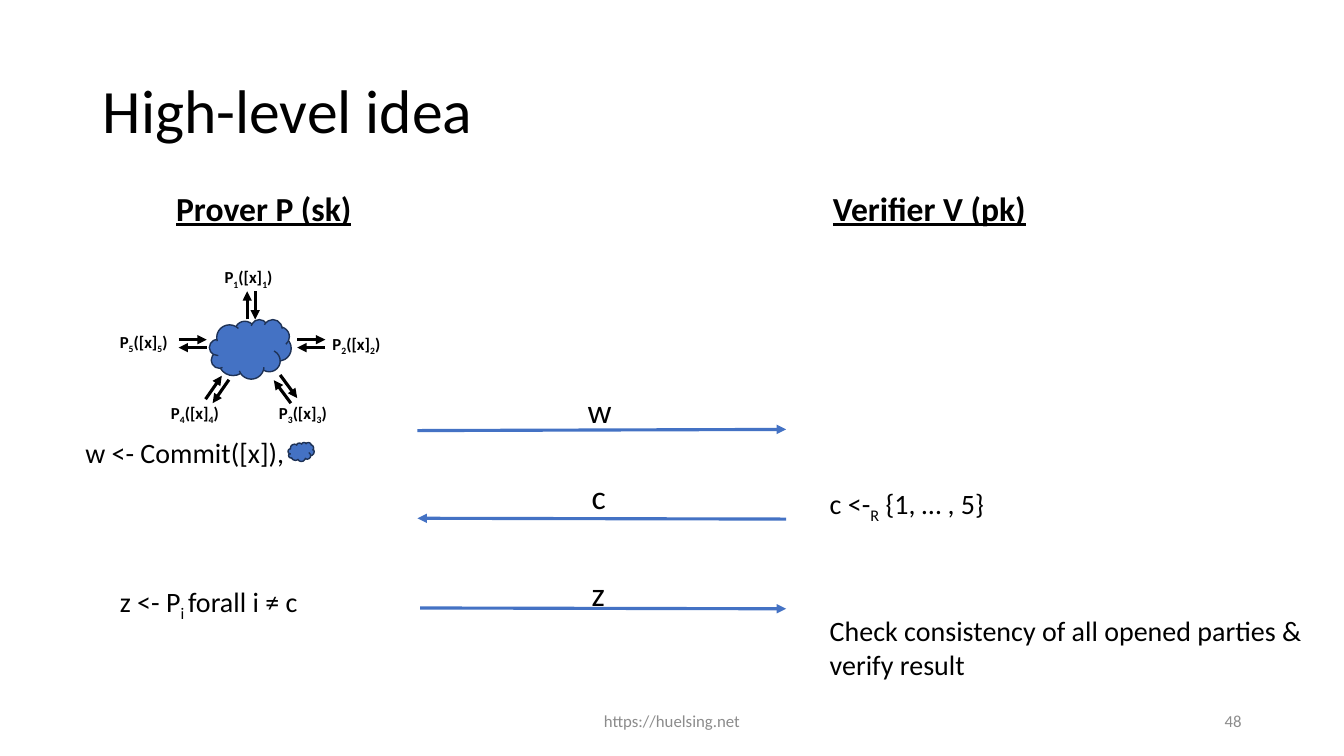
from dataclasses import dataclass

from lxml.etree import SubElement
from pptx import Presentation
from pptx.dml.color import RGBColor
from pptx.enum.shapes import MSO_CONNECTOR, MSO_SHAPE
from pptx.enum.text import MSO_ANCHOR, PP_ALIGN
from pptx.oxml.ns import qn
from pptx.util import Cm, Pt


@dataclass(frozen=True)
class Theme:
    font: str = "Calibri"
    ink: str = "000000"
    accent: str = "4472C4"
    cloud_edge: str = "1E3256"
    muted: str = "8C8C8C"
    title: int = 44
    heading: int = 24
    body: int = 20
    small: int = 12
    stroke: float = 2.25
    edge: float = 1


THEME = Theme()
NARROW_INSET = (0.25, 0.13)
WIDE_INSET = (0.33, 0.18)


def add_text(slide, text, box, size=THEME.body, color=THEME.ink, bold=False,
             underline=False, align=PP_ALIGN.LEFT, anchor=MSO_ANCHOR.TOP,
             inset=NARROW_INSET, spacing=1.0):
    frame = slide.shapes.add_textbox(*map(Cm, box)).text_frame
    frame.word_wrap = True
    frame.vertical_anchor = anchor
    frame.margin_left = frame.margin_right = Cm(inset[0])
    frame.margin_top = frame.margin_bottom = Cm(inset[1])
    paragraph = frame.paragraphs[0]
    paragraph.alignment = align
    paragraph.line_spacing = spacing
    for index, part in enumerate(text.split("|")):
        run = paragraph.add_run()
        run.text = part
        run.font.name = THEME.font
        run.font.size = Pt(size)
        run.font.bold = bold
        run.font.underline = underline
        run.font.color.rgb = RGBColor.from_string(color)
        if index % 2:
            run.font._element.set("baseline", "-25000")


def add_arrow(slide, start, end, color):
    arrow = slide.shapes.add_connector(
        MSO_CONNECTOR.STRAIGHT, *map(Cm, (*start, *end)))
    arrow.line.color.rgb = RGBColor.from_string(color)
    arrow.line.width = Pt(THEME.stroke)
    SubElement(arrow.line._get_or_add_ln(), qn("a:tailEnd"), type="triangle")
    SubElement(arrow._element.spPr, qn("a:effectLst"))


def add_cloud(slide, box):
    cloud = slide.shapes.add_shape(MSO_SHAPE.CLOUD, *map(Cm, box))
    cloud.shadow.inherit = False
    cloud.fill.solid()
    cloud.fill.fore_color.rgb = RGBColor.from_string(THEME.accent)
    cloud.line.color.rgb = RGBColor.from_string(THEME.cloud_edge)
    cloud.line.width = Pt(THEME.edge)


def build_title(slide, box):
    add_text(slide, "High-level idea", box, size=THEME.title,
             anchor=MSO_ANCHOR.MIDDLE, spacing=0.9)


def build_heading(slide, role, left, top):
    add_text(slide, role, (left, top, 6.3, 1.37), size=THEME.heading,
             bold=True, underline=True, inset=WIDE_INSET)


def build_parties(slide, left, top):
    parties = [
        (1, (2.64, 0), (3.66, 0.74), (0, 0.71), (-0.2, 0)),
        (2, (5.36, 1.68), (4.72, 1.96), (0.71, 0), (0, 0.2)),
        (3, (4.01, 3.41), (4.29, 2.85), (0.43, 0.58), (-0.16, 0.13)),
        (4, (1.29, 3.41), (2.41, 3.46), (0.41, -0.59), (0.18, 0.1)),
        (5, (0, 1.63), (1.73, 1.96), (0.71, 0), (0, 0.2)),
    ]
    add_cloud(slide, (left + 2.51, top + 1.45, 2.06, 1.5))
    for number, (label_x, label_y), (x, y), (run, rise), (dx, dy) in parties:
        add_text(slide, f"P|{number}|([x]|{number}|)",
                 (left + label_x, top + label_y, 1.83, 0.76),
                 size=THEME.small, bold=True)
        start = (left + x, top + y)
        end = (start[0] + run, start[1] + rise)
        add_arrow(slide, start, end, THEME.ink)
        add_arrow(slide, (end[0] + dx, end[1] + dy),
                  (start[0] + dx, start[1] + dy), THEME.ink)


def build_prover(slide, left, top):
    build_heading(slide, "Prover P (sk)", left + 2.21, top)
    build_parties(slide, left + 0.87, top + 2.05)
    add_text(slide, "w <- Commit([x]),", (left, top + 6.3, 6.93, 1.12))
    add_cloud(slide, (left + 5.36, top + 6.6, 0.66, 0.48))
    add_text(slide, "z <- P|i |forall\u00a0i ≠ c", (left + 0.87, top + 10.05, 6.71, 1.12))


def build_verifier(slide, left, top):
    build_heading(slide, "Verifier V (pk)", left, top)
    add_text(slide, "c <-|R| {1, … , 5}", (left, top + 7.59, 5.03, 1.12))
    add_text(slide, "Check consistency of all opened parties & verify result",
             (left, top + 10.79, 12.73, 1.96))


def build_messages(slide, left, top):
    messages = [
        ("w", (3.96, 0), (0, 1.2), (9.29, 1.17)),
        ("c", (4.06, 2.16), (9.29, 3.43), (0, 3.41)),
        ("z", (4.06, 4.6), (0.07, 5.67), (9.29, 5.69)),
    ]
    for message, label, start, end in messages:
        add_arrow(slide, (left + start[0], top + start[1]),
                  (left + end[0], top + end[1]), THEME.accent)
        add_text(slide, message, (left + label[0], top + label[1], 1.19, 1.37),
                 size=THEME.heading, inset=WIDE_INSET)


def build_footer(slide, left, top):
    entries = [
        ("https://huelsing.net", 0, 11.43, PP_ALIGN.CENTER),
        ("48", 12.7, 7.62, PP_ALIGN.RIGHT),
    ]
    for text, offset, width, align in entries:
        add_text(slide, text, (left + offset, top, width, 1.02), size=THEME.small,
                 color=THEME.muted, align=align, anchor=MSO_ANCHOR.MIDDLE)


def main():
    deck = Presentation()
    deck.slide_width, deck.slide_height = Cm(33.87), Cm(19.05)
    slide = deck.slides.add_slide(deck.slide_layouts[6])
    build_title(slide, (2.34, 1.02, 29.21, 3.68))
    build_prover(slide, 1.9, 4.55)
    build_verifier(slide, 20.66, 4.55)
    build_messages(slide, 10.52, 9.65)
    build_footer(slide, 11.22, 17.65)
    deck.save("out.pptx")


if __name__ == "__main__":
    main()
